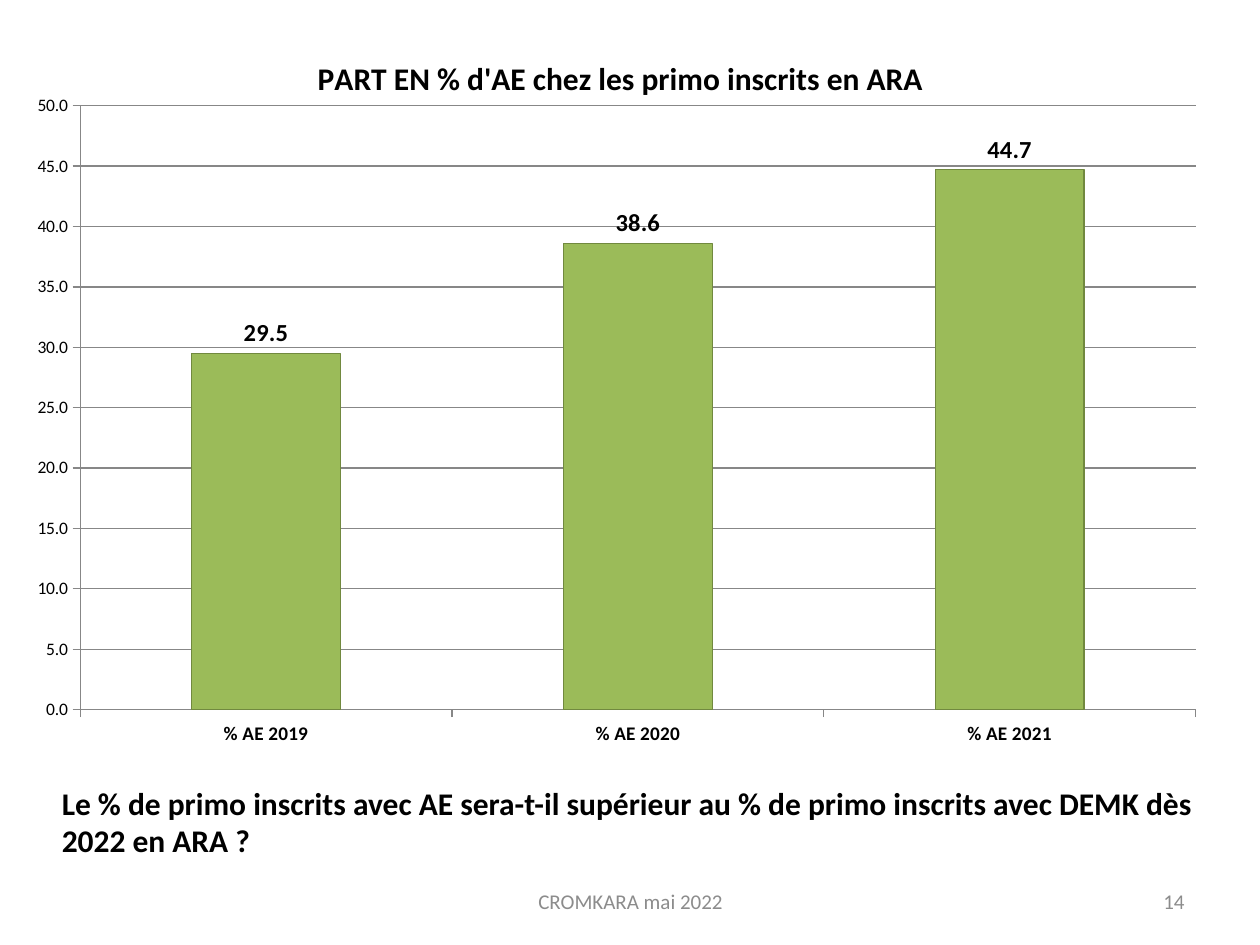
from dataclasses import dataclass

from lxml.etree import SubElement
from pptx import Presentation
from pptx.chart.data import CategoryChartData
from pptx.dml.color import RGBColor
from pptx.enum.chart import XL_CHART_TYPE as ChartType, XL_LABEL_POSITION as LabelPosition
from pptx.enum.chart import XL_TICK_MARK as TickMark
from pptx.enum.text import MSO_ANCHOR as Anchor, PP_ALIGN as Align
from pptx.oxml.ns import qn
from pptx.util import Inches, Pt


@dataclass(frozen=True)
class Theme:
    font: str = "Calibri"
    ink: RGBColor = RGBColor(0x00, 0x00, 0x00)
    muted: RGBColor = RGBColor(0x8C, 0x8C, 0x8C)
    rule: RGBColor = RGBColor(0x87, 0x87, 0x87)
    bar: RGBColor = RGBColor(0x9B, 0xBB, 0x59)
    bar_edge: RGBColor = RGBColor(0x71, 0x89, 0x3F)
    heading: int = 18
    value: int = 14
    footer: int = 12
    category: int = 11
    scale: int = 10


@dataclass(frozen=True)
class Footer:
    text: str
    left: float
    width: float
    align: Align


THEME = Theme()
QUESTION = (
    "Le % de primo inscrits avec AE sera-t-il supérieur au % de primo inscrits "
    "avec DEMK dès 2022 en ARA ?"
)
CHART_TITLE = "PART EN % d'AE chez les primo inscrits en ARA"
SHARES = {"% AE 2019": 29.5, "% AE 2020": 38.6, "% AE 2021": 44.7}
PLOT_AREA = {"x": 0.05, "y": 0.104, "w": 0.929, "h": 0.818}
FOOTERS = (
    Footer("CROMKARA mai 2022", 3.42, 3.17, Align.CENTER),
    Footer("14", 7.17, 2.33, Align.RIGHT),
)


def set_font(font, size: int, color: RGBColor = THEME.ink, bold: bool = False) -> None:
    font.name = THEME.font
    font.size = Pt(size)
    font.bold = bold
    font.color.rgb = color


def set_line(line, color: RGBColor) -> None:
    line.color.rgb = color
    line.width = Pt(0.75)


def place_plot(chart) -> None:
    plot_area = chart._chartSpace.chart.plotArea
    for old in plot_area.findall(qn("c:layout")):
        plot_area.remove(old)
    layout = plot_area.makeelement(qn("c:layout"))
    plot_area.insert(0, layout)
    manual = SubElement(layout, qn("c:manualLayout"))
    settings = {"layoutTarget": "inner", "xMode": "edge", "yMode": "edge", **PLOT_AREA}
    for name, value in settings.items():
        SubElement(manual, qn(f"c:{name}")).set("val", str(value))


def add_share_chart(page) -> None:
    data = CategoryChartData(number_format="0.0")
    data.categories = list(SHARES)
    data.add_series("% AE", list(SHARES.values()))
    chart = page.shapes.add_chart(
        ChartType.COLUMN_CLUSTERED,
        Inches(0.16), Inches(0.23), Inches(9.53), Inches(5.86), data,
    ).chart
    set_font(chart.font, THEME.scale)
    chart.has_legend = False
    chart.has_title = True
    chart.chart_title.include_in_layout = False
    title = chart.chart_title.text_frame
    title.text = CHART_TITLE
    set_font(title.paragraphs[0].font, THEME.heading, bold=True)
    place_plot(chart)

    plot = chart.plots[0]
    plot.gap_width = 150
    plot.vary_by_categories = False
    bars = plot.series[0]
    bars.format.fill.solid()
    bars.format.fill.fore_color.rgb = THEME.bar
    set_line(bars.format.line, THEME.bar_edge)
    labels = bars.data_labels
    labels.show_value = True
    labels.number_format = "0.0"
    labels.number_format_is_linked = False
    labels.position = LabelPosition.OUTSIDE_END
    set_font(labels.font, THEME.value, bold=True)

    for axis in (chart.category_axis, chart.value_axis):
        axis.major_tick_mark = TickMark.OUTSIDE
        axis.minor_tick_mark = TickMark.NONE
        set_line(axis.format.line, THEME.rule)
    set_font(chart.category_axis.tick_labels.font, THEME.category, bold=True)
    scale = chart.value_axis
    scale.minimum_scale, scale.maximum_scale, scale.major_unit = 0, 50, 5
    scale.has_major_gridlines = True
    set_line(scale.major_gridlines.format.line, THEME.rule)
    scale.tick_labels.number_format = "0.0"
    scale.tick_labels.number_format_is_linked = False
    set_font(scale.tick_labels.font, THEME.scale)


def write_question(page) -> None:
    box = page.shapes.title
    box.left, box.top = Inches(0.39), Inches(6.25)
    box.width, box.height = Inches(9.45), Inches(0.62)
    frame = box.text_frame
    frame.text = QUESTION
    frame.word_wrap = True
    frame.vertical_anchor = Anchor.BOTTOM
    para = frame.paragraphs[0]
    para.alignment = Align.LEFT
    set_font(para.font, THEME.heading, bold=True)


def add_footer(page, footer: Footer) -> None:
    box = page.shapes.add_textbox(
        Inches(footer.left), Inches(6.95), Inches(footer.width), Inches(0.4)
    )
    frame = box.text_frame
    frame.text = footer.text
    frame.word_wrap = True
    frame.vertical_anchor = Anchor.MIDDLE
    para = frame.paragraphs[0]
    para.alignment = footer.align
    set_font(para.font, THEME.footer, THEME.muted)


def main() -> None:
    deck = Presentation()
    deck.slide_width, deck.slide_height = Inches(10), Inches(7.5)
    page = deck.slides.add_slide(deck.slide_layouts[5])
    write_question(page)
    for footer in FOOTERS:
        add_footer(page, footer)
    add_share_chart(page)
    deck.save("out.pptx")


if __name__ == "__main__":
    main()
